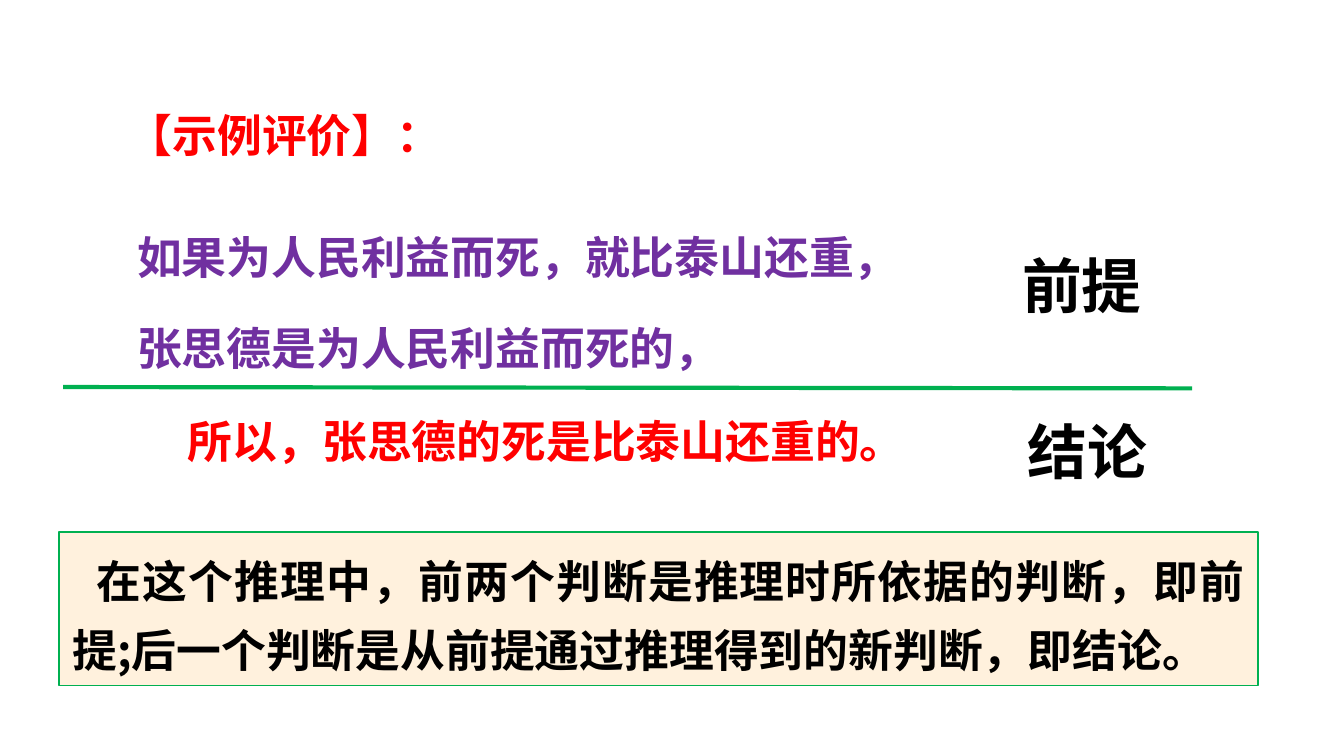
"""Build the slide on premises and conclusion of an inference."""
from pptx import Presentation
from pptx import util as u
from pptx.dml.color import RGBColor
from pptx.enum import shapes, text
from pptx.oxml.ns import qn
from lxml import etree

JP, SC = "Noto Sans CJK JP", "Noto Sans CJK SC"
RED, GREEN, BLACK = "FF0000", "00B050", "000000"
LEFT, MID, JUST = text.PP_ALIGN.LEFT, text.PP_ALIGN.CENTER, text.PP_ALIGN.JUSTIFY


def color(code):
    return RGBColor.from_string(code)


def box(*sides):
    return [u.Inches(side) for side in sides]


def place(shape, *sides):
    shape.left, shape.top, shape.width, shape.height = box(*sides)
    return shape


def write(shape, *lines, font=JP, size=24, fill=BLACK, align=LEFT,
          space=1.0, margin=0, indent=0, wrap=True):
    frame = shape.text_frame
    frame.word_wrap = wrap
    frame.auto_size = text.MSO_AUTO_SIZE.NONE
    frame.vertical_anchor = text.MSO_ANCHOR.TOP
    frame.text = "\n".join(lines)
    for para in frame.paragraphs:
        para.alignment, para.line_spacing = align, space
        para.space_before = para.space_after = u.Pt(0)
        props = para._p.get_or_add_pPr()
        props.set("marL", str(u.Inches(margin)))
        props.set("indent", str(u.Inches(indent)))
        etree.SubElement(props, qn("a:buNone"))
        for run in para.runs:
            face = run.font
            face.name, face.size, face.bold = font, u.Pt(size), True
            face.color.rgb = color(fill)
            east = etree.SubElement(run._r.get_or_add_rPr(), qn("a:ea"))
            east.set("typeface", font)


def label(slide, words, *sides, **style):
    write(slide.shapes.add_textbox(*box(*sides)), words, wrap=False, **style)


def rule(slide, *ends):
    line = slide.shapes.add_connector(shapes.MSO_CONNECTOR.STRAIGHT, *box(*ends))
    line.line.color.rgb = color(GREEN)
    line.line.width = u.Pt(2.25)
    etree.SubElement(line._element.spPr, qn("a:effectLst"))


def panel(slide, words, *sides, **style):
    shape = slide.shapes.add_shape(shapes.MSO_SHAPE.RECTANGLE, *box(*sides))
    shape.shadow.inherit = False
    shape.fill.solid()
    shape.fill.fore_color.rgb = color("FFF1DD")
    shape.line.color.rgb = color(GREEN)
    shape.line.width = u.Pt(0.75)
    write(shape, words, **style)


def main():
    deck = Presentation()
    deck.slide_width = u.Inches(10)
    deck.slide_height = deck.slide_width * 9 // 16
    slide = deck.slides.add_slide(deck.slide_layouts[1])
    title, body = slide.placeholders

    write(place(body, 0.62, 1.38, 7.14, 1.47),
          "如果为人民利益而死，就比泰山还重，", "张思德是为人民利益而死的，",
          fill="7030A0", space=1.7, margin=0.3)
    write(place(title, 0.85, 0.47, 2.57, 0.79), "【示例评价】：",
          font=SC, fill=RED, align=JUST, space=1.7, wrap=False)
    rule(slide, 8.87, 2.89, 0.47, 2.88)
    label(slide, "所以，张思德的死是比泰山还重的。", 1.3, 3.03, 5.61, 0.51, fill=RED)
    for words, left, top in (("前提", 7.5, 1.8), ("结论", 7.54, 3.04)):
        label(slide, words, left, top, 1.1, 0.64, font="Arial", size=32, align=MID)
    panel(slide, "在这个推理中，前两个判断是推理时所依据的判断，即前提;"
          "后一个判断是从前提通过推理得到的新判断，即结论。",
          0.44, 3.96, 8.92, 1.14, font=SC, align=JUST, space=u.Pt(37), indent=0.18)
    deck.save("out.pptx")


if __name__ == "__main__":
    main()
